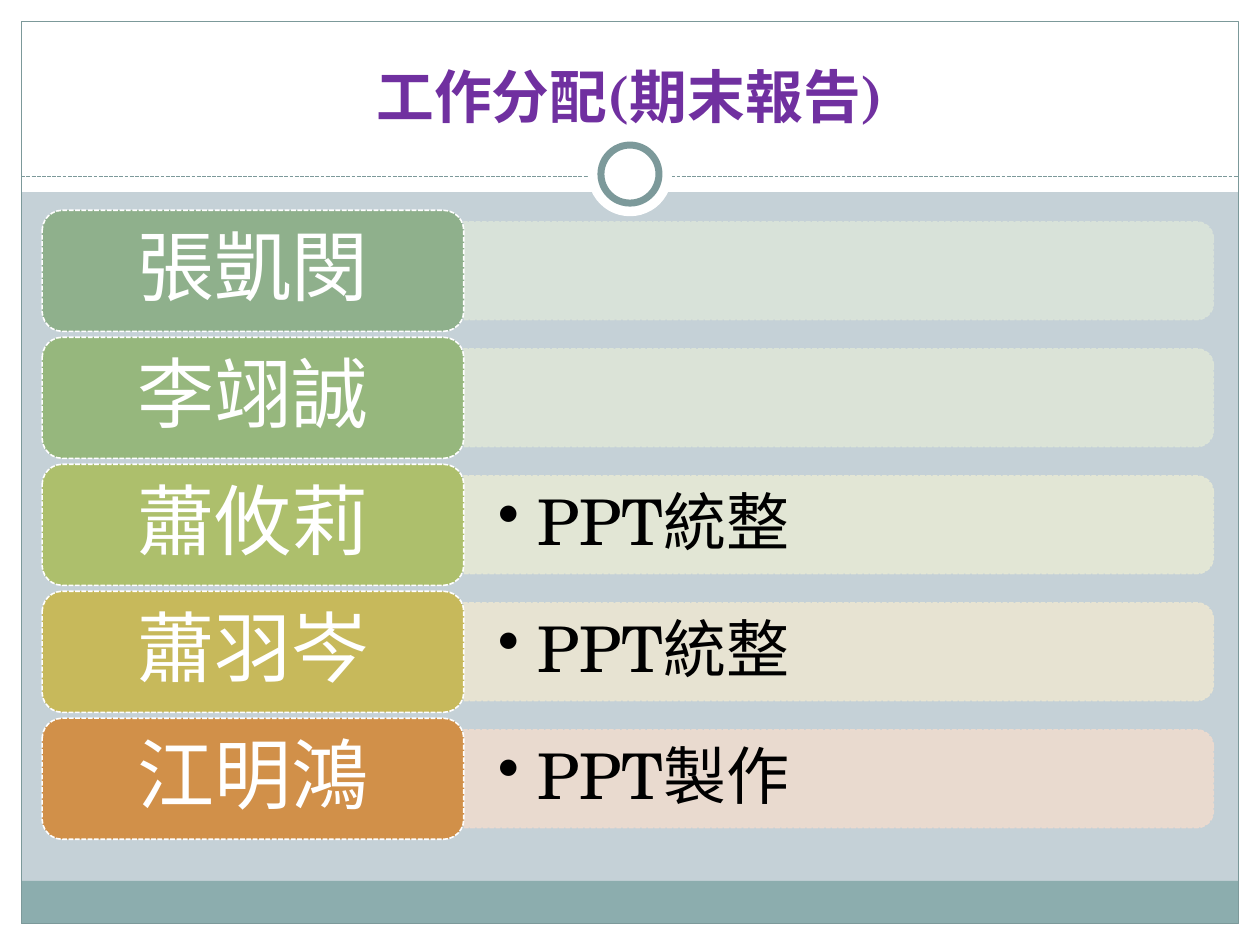
import pptx
import pptx.util
import pptx.dml.color
import pptx.enum.dml
import pptx.enum.shapes
import pptx.enum.text
import pptx.oxml
import pptx.oxml.ns

Cm, Pt = pptx.util.Cm, pptx.util.Pt
SHAPE = pptx.enum.shapes.MSO_SHAPE
ALIGN = pptx.enum.text.PP_ALIGN
ANCHOR = pptx.enum.text.MSO_ANCHOR
DASH = pptx.enum.dml.MSO_LINE.SQUARE_DOT  # written as sysDash

FONT = "TeX Gyre Schola"
TITLE = "工作分配(期末報告)"
# member, task, tab colour, bar colour
MEMBERS = [
    ("張凱閔", "", "8FB08C", "DBE4DA"),
    ("李翊誠", "", "96B77D", "DEE6D8"),
    ("蕭攸莉", "PPT統整", "ADBF6C", "E6E9D5"),
    ("蕭羽岑", "PPT統整", "C7B95B", "EBE6D2"),
    ("江明鴻", "PPT製作", "D19049", "EEDBCF"),
]
COLORS = {
    "background": "C5D1D7",
    "white": "FFFFFF",
    "black": "000000",
    "footer": "8CADAE",
    "frame": "7C999A",
    "title": "7030A0",
}
WIDTH, HEIGHT, MARGIN = 25.4, 19.05, 0.43
HEADER_HEIGHT, RULE_TOP = 3.87, 3.56
FOOTER_TOP, FOOTER_HEIGHT = 17.76, 0.86
RING_CENTER = 3.51
TAB_LEFT, TAB_WIDTH, TAB_HEIGHT = 0.85, 8.5, 2.44
BAR_LENGTH, BAR_HEIGHT = 15.11, 1.97
FIRST_CENTER, ROW_PITCH = 5.46, 2.56


def rgb(color):
    return pptx.dml.color.RGBColor.from_string(color)


def set_line(line, color, width, dashed=False):
    line.color.rgb = rgb(color)
    line.width = Pt(width)
    if dashed:
        line.dash_style = DASH


def add_shape(slide, kind, left, top, width, height, fill=None, outline=None):
    """Outline is a tuple of colour, width in points and optional dashing."""
    shape = slide.shapes.add_shape(kind, Cm(left), Cm(top), Cm(width), Cm(height))
    shape.shadow.inherit = False
    if fill:
        shape.fill.solid()
        shape.fill.fore_color.rgb = rgb(fill)
    else:
        shape.fill.background()
    if outline:
        set_line(shape.line, *outline)
    else:
        shape.line.fill.background()
    return shape


def write_text(shape, text, size, color, align, anchor, side=0.25, edge=0.13, bold=False):
    frame = shape.text_frame
    frame.word_wrap = True
    frame.vertical_anchor = anchor
    frame.margin_left = frame.margin_right = Cm(side)
    frame.margin_top = frame.margin_bottom = Cm(edge)
    paragraph = frame.paragraphs[0]
    paragraph.alignment = align
    run = paragraph.add_run()
    run.text = text
    run.font.name = FONT
    run.font.size = Pt(size)
    run.font.bold = bold
    run.font.color.rgb = rgb(color)
    return paragraph


def add_bullet(paragraph, indent):
    properties = paragraph._p.get_or_add_pPr()
    properties.set("marL", str(Cm(indent)))
    properties.set("indent", str(-Cm(indent)))
    bullet = pptx.oxml.parse_xml(f'<a:buChar {pptx.oxml.ns.nsdecls("a")} char="•"/>')
    properties.append(bullet)


def make_translucent(shape, percent):
    for color in shape._element.spPr.iter(pptx.oxml.ns.qn("a:srgbClr")):
        color.append(pptx.oxml.parse_xml(
            f'<a:alpha {pptx.oxml.ns.nsdecls("a")} val="{percent * 1000}"/>'))


def add_backdrop(slide):
    slide.background.fill.solid()
    slide.background.fill.fore_color.rgb = rgb(COLORS["background"])
    inner_width = WIDTH - 2 * MARGIN
    borders = [
        (0, HEIGHT - MARGIN, WIDTH, MARGIN),
        (0, 0, WIDTH, HEADER_HEIGHT),
        (0, 0, MARGIN, HEIGHT),
        (WIDTH - MARGIN, 0, MARGIN, HEIGHT),
    ]
    for border in borders:
        add_shape(slide, SHAPE.RECTANGLE, *border, COLORS["white"])
    add_shape(slide, SHAPE.RECTANGLE, MARGIN, FOOTER_TOP, inner_width, FOOTER_HEIGHT,
              COLORS["footer"])
    add_shape(slide, SHAPE.RECTANGLE, MARGIN, MARGIN, inner_width, HEIGHT - 2 * MARGIN,
              outline=(COLORS["frame"], 0.75))
    rule = slide.shapes.add_connector(
        pptx.enum.shapes.MSO_CONNECTOR.STRAIGHT,
        Cm(MARGIN), Cm(RULE_TOP), Cm(WIDTH - MARGIN), Cm(RULE_TOP))
    set_line(rule.line, COLORS["frame"], 0.75, True)
    rule._element.spPr.append(
        pptx.oxml.parse_xml(f'<a:effectLst {pptx.oxml.ns.nsdecls("a")}/>'))
    for diameter, outline in [(1.7, None), (1.17, (COLORS["frame"], 4))]:
        add_shape(slide, SHAPE.OVAL, (WIDTH - diameter) / 2, RING_CENTER - diameter / 2,
                  diameter, diameter, COLORS["white"], outline)


def add_member(slide, center, name, task, tab_color, bar_color):
    bar_left = TAB_LEFT + TAB_WIDTH
    # The bar is a tall shape turned on its side, so its right corners are round.
    bar = add_shape(slide, SHAPE.ROUND_2_SAME_RECTANGLE,
                    bar_left + (BAR_LENGTH - BAR_HEIGHT) / 2, center - BAR_LENGTH / 2,
                    BAR_HEIGHT, BAR_LENGTH, bar_color, (bar_color, 0.9, True))
    bar.rotation = 90
    make_translucent(bar, 90)
    if task:
        box = slide.shapes.add_textbox(Cm(bar_left), Cm(center - 0.88), Cm(15.01), Cm(1.76))
        paragraph = write_text(box, task, 36, COLORS["black"], ALIGN.LEFT, ANCHOR.MIDDLE,
                               0.69, 0.34)
        paragraph.line_spacing = 0.9
        add_bullet(paragraph, 0.79)
    tab = add_shape(slide, SHAPE.ROUNDED_RECTANGLE, TAB_LEFT, center - TAB_HEIGHT / 2,
                    TAB_WIDTH, TAB_HEIGHT, tab_color, (COLORS["white"], 0.9, True))
    paragraph = write_text(tab, name, 44, COLORS["white"], ALIGN.CENTER, ANCHOR.MIDDLE,
                           0.46, 0.23)
    paragraph.line_spacing = 0.9


def main():
    presentation = pptx.Presentation()
    presentation.slide_width, presentation.slide_height = Cm(WIDTH), Cm(HEIGHT)
    slide = presentation.slides.add_slide(presentation.slide_layouts[6])
    add_backdrop(slide)
    title = slide.shapes.add_textbox(Cm(0.85), Cm(0.64), Cm(23.7), Cm(2.11))
    write_text(title, TITLE, 33, COLORS["title"], ALIGN.CENTER, ANCHOR.BOTTOM, bold=True)
    for row, member in enumerate(MEMBERS):
        add_member(slide, FIRST_CENTER + row * ROW_PITCH, *member)
    presentation.save("out.pptx")


if __name__ == "__main__":
    main()
